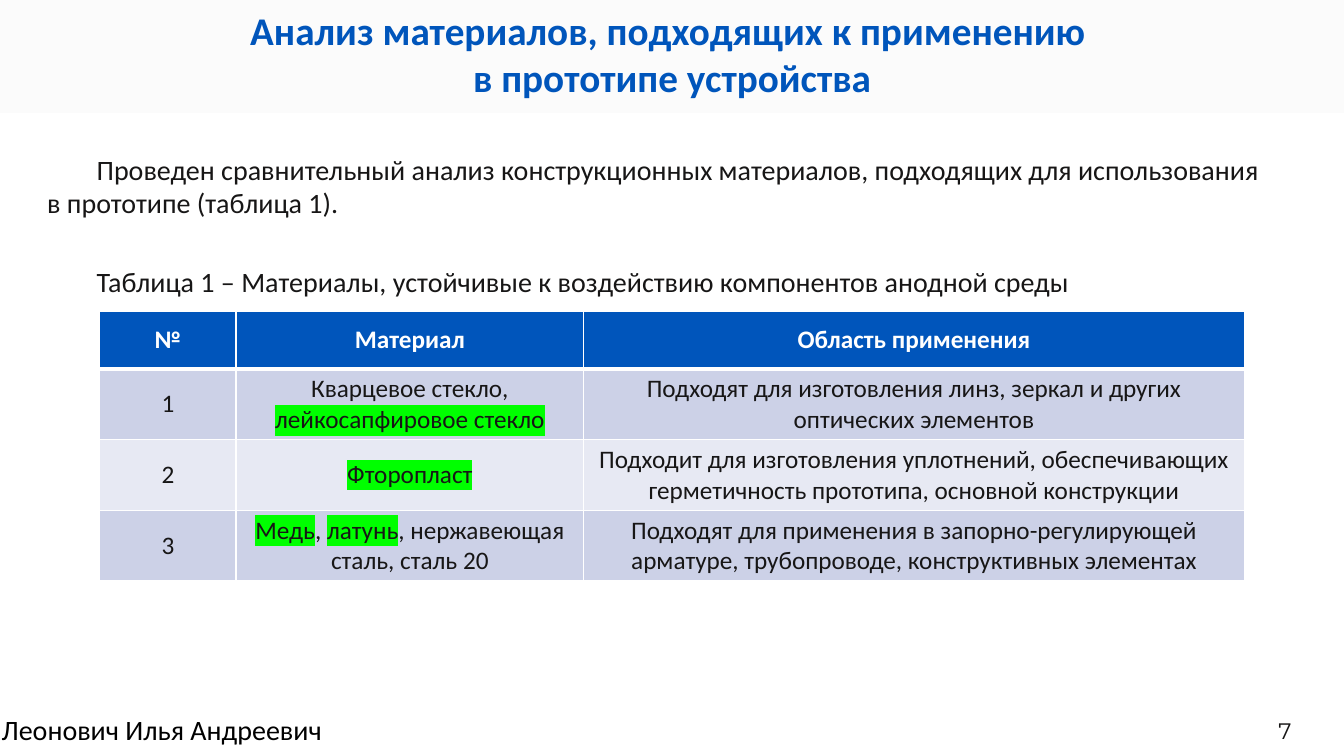
import pptx
import pptx.util
import pptx.dml.color
import pptx.enum.shapes
import pptx.enum.text
import pptx.oxml

RGB = pptx.dml.color.RGBColor
Inches = pptx.util.Inches
ALIGN = pptx.enum.text.PP_ALIGN
MIDDLE = pptx.enum.text.MSO_ANCHOR.MIDDLE
NS = 'xmlns:a="http://schemas.openxmlformats.org/drawingml/2006/main"'

BLUE = RGB(0x00, 0x55, 0xBB)
INK = RGB(0x17, 0x16, 0x16)
BLACK = RGB(0, 0, 0)
WHITE = RGB(0xFF, 0xFF, 0xFF)
PALE = RGB(0xFB, 0xFB, 0xFB)
LILAC = RGB(0xCC, 0xD1, 0xE7)
MIST = RGB(0xE7, 0xE9, 0xF3)
GREEN = RGB(0x00, 0xFF, 0x00)

MARKED = {"лейкосапфировое стекло", "Фторопласт", "Медь", "латунь"}


def write(frame, parts, color, size, align=ALIGN.CENTER, bold=False, name="Calibri"):
    """Fill the first paragraph with runs; None is a line break."""
    para = frame.paragraphs[0]
    para.alignment = align
    for part in parts:
        if part is None:
            para.add_line_break()
            continue
        run = para.add_run()
        run.text = part
        style = {"size": pptx.util.Pt(size), "bold": bold, "name": name}
        for key, value in style.items():
            setattr(run.font, key, value)
        run.font.color.rgb = color
        if part in MARKED:
            mark = pptx.oxml.parse_xml(
                f'<a:highlight {NS}><a:srgbClr val="{GREEN}"/></a:highlight>')
            run.font.fill  # the highlight follows the text colour
            run._r.rPr.find(pptx.oxml.ns.qn("a:solidFill")).addnext(mark)
    return para


deck = pptx.Presentation()
deck.slide_width, deck.slide_height = Inches(13.33), Inches(7.5)
slide = deck.slides.add_slide(deck.slide_layouts[5])
shapes = slide.shapes

# Header band and title
band = shapes.add_shape(pptx.enum.shapes.MSO_SHAPE.RECTANGLE,
                        0, 0, deck.slide_width, Inches(1.11))
band.shadow.inherit = False
band.fill.solid()
band.fill.fore_color.rgb = PALE
band.line.color.rgb = PALE
band.line.width = pptx.util.Pt(1)

title = shapes.title
title.element.addprevious(band.element)
place = {"left": 0.37, "top": 0.01, "width": 12.59, "height": 1.04}
for key, value in place.items():
    setattr(title, key, Inches(value))
title.text_frame.auto_size = pptx.enum.text.MSO_AUTO_SIZE.NONE
title.text_frame.vertical_anchor = MIDDLE
write(title.text_frame,
      ["Анализ материалов, подходящих к применению ", None, "в прототипе устройства"],
      BLUE, 28, bold=True)

# Body text and table caption, with a first-line indent
for text, top, width, height in [
    ("Проведен сравнительный анализ конструкционных материалов, подходящих "
     "для использования в прототипе (таблица 1).", 1.46, 12.24, 0.77),
    ("Таблица 1 – Материалы, устойчивые к воздействию компонентов анодной среды",
     2.57, 11, 0.5),
]:
    box = shapes.add_textbox(Inches(0.37), Inches(top), Inches(width), Inches(height))
    box.text_frame.word_wrap = True
    para = write(box.text_frame, [text], INK, 20, ALIGN.LEFT)
    para._p.get_or_add_pPr().set("indent", str(Inches(0.49)))

# Table
rows = [
    (["№"], ["Материал"], ["Область применения"]),
    (["1"], ["Кварцевое стекло, ", "лейкосапфировое стекло"],
     ["Подходят для изготовления линз, зеркал и других оптических элементов"]),
    (["2"], ["Фторопласт"],
     ["Подходит для изготовления уплотнений, обеспечивающих герметичность "
      "прототипа, основной конструкции"]),
    (["3"], ["Медь", ", ", "латунь", ", нержавеющая сталь, сталь 20"],
     ["Подходят для применения в запорно-регулирующей арматуре, трубопроводе, "
      "конструктивных элементах"]),
]
table = shapes.add_table(len(rows), 3, Inches(0.99), Inches(3.09),
                         Inches(11.35), Inches(2.67)).table
for col, width in zip(table.columns, [1.35, 3.45, 6.55]):
    col.width = Inches(width)
for r, row in enumerate(rows):
    head = r == 0
    table.rows[r].height = Inches(0.57 if head else 0.7)
    for c, parts in enumerate(row):
        cell = table.cell(r, c)
        cell.vertical_anchor = MIDDLE
        write(cell.text_frame, parts, WHITE if head else INK, 18, bold=head)
        for side in "LRTB":
            thick = (r, side) in [(0, "B"), (1, "T")]
            cell._tc.get_or_add_tcPr().append(pptx.oxml.parse_xml(
                f'<a:ln{side} {NS} w="{pptx.util.Pt(3 if thick else 1)}">'
                f'<a:solidFill><a:srgbClr val="{WHITE}"/></a:solidFill></a:ln{side}>'))
        cell.fill.solid()
        cell.fill.fore_color.rgb = BLUE if head else LILAC if r % 2 else MIST

# Footer: author and page number
for text, left, top, width, height, color, size, align, name in [
    ("Леонович Илья Андреевич", -0.1, 7.02, 3.41, 0.44, BLACK, 20, ALIGN.CENTER, "Calibri"),
    ("7", 12.58, 7.07, 0.48, 0.37, INK, 16, ALIGN.LEFT, "Montserrat"),
]:
    box = shapes.add_textbox(Inches(left), Inches(top), Inches(width), Inches(height))
    box.text_frame.word_wrap = False
    write(box.text_frame, [text], color, size, align, name=name)

deck.save("out.pptx")
